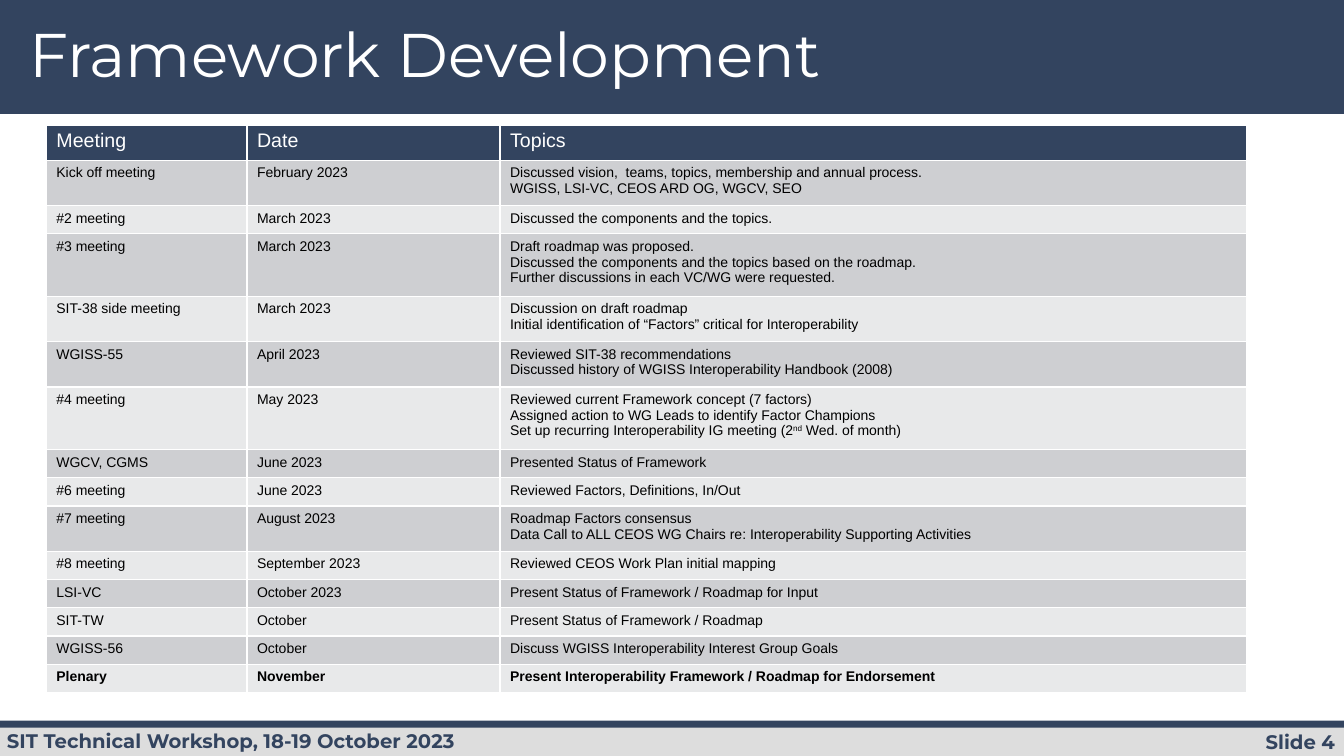
from pptx import Presentation
from pptx.dml.color import RGBColor
from pptx.enum.shapes import MSO_SHAPE
from pptx.enum.text import MSO_ANCHOR, PP_ALIGN
from pptx.util import Inches, Pt

TITLE = "Framework Development"
FOOTER = "SIT Technical Workshop, 18-19 October 2023"
PAGE = "Slide 4"
HEADER = ("Meeting", "Date", ["Topics"])
MEETINGS = [
    ("Kick off meeting", "February 2023", [
        "Discussed vision,  teams, topics, membership and annual process.",
        "WGISS, LSI-VC, CEOS ARD OG, WGCV, SEO"]),
    ("#2 meeting", "March 2023", ["Discussed the components and the topics."]),
    ("#3 meeting", "March 2023", [
        "Draft roadmap was proposed.",
        "Discussed the components and the topics based on the roadmap.",
        "Further discussions in each VC/WG were requested."]),
    ("SIT-38 side meeting", "March 2023", [
        "Discussion on draft roadmap",
        "Initial identification of “Factors” critical for Interoperability"]),
    ("WGISS-55", "April 2023", [
        "Reviewed SIT-38 recommendations",
        "Discussed history of WGISS Interoperability Handbook (2008)"]),
    ("#4 meeting", "May 2023", [
        "Reviewed current Framework concept (7 factors)",
        "Assigned action to WG Leads to identify Factor Champions",
        "Set up recurring Interoperability IG meeting (2^nd^ Wed. of month)"]),
    ("WGCV, CGMS", "June 2023", ["Presented Status of Framework"]),
    ("#6 meeting", "June 2023", ["Reviewed Factors, Definitions, In/Out"]),
    ("#7 meeting", "August 2023", [
        "Roadmap Factors consensus",
        "Data Call to ALL CEOS WG Chairs re: Interoperability Supporting Activities"]),
    ("#8 meeting", "September 2023", ["Reviewed CEOS Work Plan initial mapping"]),
    ("LSI-VC", "October 2023", ["Present Status of Framework / Roadmap for Input"]),
    ("SIT-TW", "October", ["Present Status of Framework / Roadmap"]),
    ("WGISS-56", "October", ["Discuss WGISS Interoperability Interest Group Goals"]),
    ("Plenary", "November", ["Present Interoperability Framework / Roadmap for Endorsement"]),
]

NAVY = RGBColor(0x33, 0x44, 0x5F)
GREY = RGBColor(0xDD, 0xDD, 0xDD)
WHITE = RGBColor(0xFF, 0xFF, 0xFF)
BLACK = RGBColor(0, 0, 0)
BANDS = (RGBColor(0xCE, 0xCF, 0xD2), RGBColor(0xE8, 0xE9, 0xEA))
RECTANGLE = MSO_SHAPE.RECTANGLE
LEFT, RIGHT = PP_ALIGN.LEFT, PP_ALIGN.RIGHT
TOP = MSO_ANCHOR.TOP

WIDTH, HEIGHT = 13.33, 7.5
TABLE_LEFT, TABLE_TOP = 0.46, 1.24
COLUMNS = (1.99, 2.51, 7.4)
HEADER_ROW = 0.35
ROW_BY_LINES = {1: 0.28, 2: 0.45, 3: 0.62}
BARS = [(0, 1.13, NAVY), (7.19, 0.31, GREY), (7.15, 0.07, NAVY)]
FOOTER_TEXTS = [(PAGE, 11.23, 7.19, 2.11, 0.34, RIGHT),
                (FOOTER, -0.03, 7.18, 5.39, 0.32, LEFT)]


def set_font(paragraph, name, size, color, bold=False):
    font = paragraph.font
    font.name, font.size, font.bold = name, Pt(size), bold
    font.color.rgb = color


def add_bar(slide, top, height, color):
    bar = slide.shapes.add_shape(RECTANGLE, 0, Inches(top), Inches(WIDTH), Inches(height))
    bar.shadow.inherit = False
    bar.fill.solid()
    bar.fill.fore_color.rgb = color
    bar.line.fill.background()


def add_footer_text(slide, text, left, top, width, height, alignment):
    box = slide.shapes.add_textbox(*map(Inches, (left, top, width, height)))
    box.text_frame.word_wrap = True
    paragraph = box.text_frame.paragraphs[0]
    paragraph.text = text
    paragraph.alignment = alignment
    set_font(paragraph, "Montserrat", 14, NAVY, True)


def fill_cell(cell, lines, size, color, bold, background):
    cell.fill.solid()
    cell.fill.fore_color.rgb = background
    frame = cell.text_frame
    for index, line in enumerate(lines):
        paragraph = frame.add_paragraph() if index else frame.paragraphs[0]
        for part, text in enumerate(line.split("^")):
            run = paragraph.add_run()
            run.text = text
            if part % 2:
                run._r.get_or_add_rPr().set("baseline", "30000")
        set_font(paragraph, "Arial", size, color, bold)


def add_meeting_table(slide):
    heights = [HEADER_ROW] + [ROW_BY_LINES[len(topics)] for _, _, topics in MEETINGS]
    frame = slide.shapes.add_table(
        len(heights), len(COLUMNS), Inches(TABLE_LEFT), Inches(TABLE_TOP),
        Inches(sum(COLUMNS)), Inches(sum(heights)))
    table = frame.table
    for column, width in zip(table.columns, COLUMNS):
        column.width = Inches(width)
    for index, (meeting, date, topics) in enumerate([HEADER] + MEETINGS):
        table.rows[index].height = Inches(heights[index])
        if index == 0:
            style = (14, WHITE, False, NAVY)
        else:
            style = (10, BLACK, index == len(MEETINGS), BANDS[(index - 1) % 2])
        for cell, lines in zip(table.rows[index].cells, ([meeting], [date], topics)):
            fill_cell(cell, lines, *style)


def add_title(slide):
    title = slide.shapes.title
    title.left, title.top, title.width, title.height = map(Inches, (0.19, 0.19, 10.27, 0.85))
    title.text_frame.text = TITLE
    title.text_frame.vertical_anchor = TOP
    paragraph = title.text_frame.paragraphs[0]
    paragraph.alignment = LEFT
    paragraph.line_spacing = 0.9
    set_font(paragraph, "Montserrat", 44, WHITE)
    slide.shapes._spTree.append(title._element)


def main():
    presentation = Presentation()
    presentation.slide_width, presentation.slide_height = Inches(WIDTH), Inches(HEIGHT)
    slide = presentation.slides.add_slide(presentation.slide_layouts[5])
    for bar in BARS:
        add_bar(slide, *bar)
    for footer_text in FOOTER_TEXTS:
        add_footer_text(slide, *footer_text)
    add_title(slide)
    add_meeting_table(slide)
    presentation.save("out.pptx")


if __name__ == "__main__":
    main()
